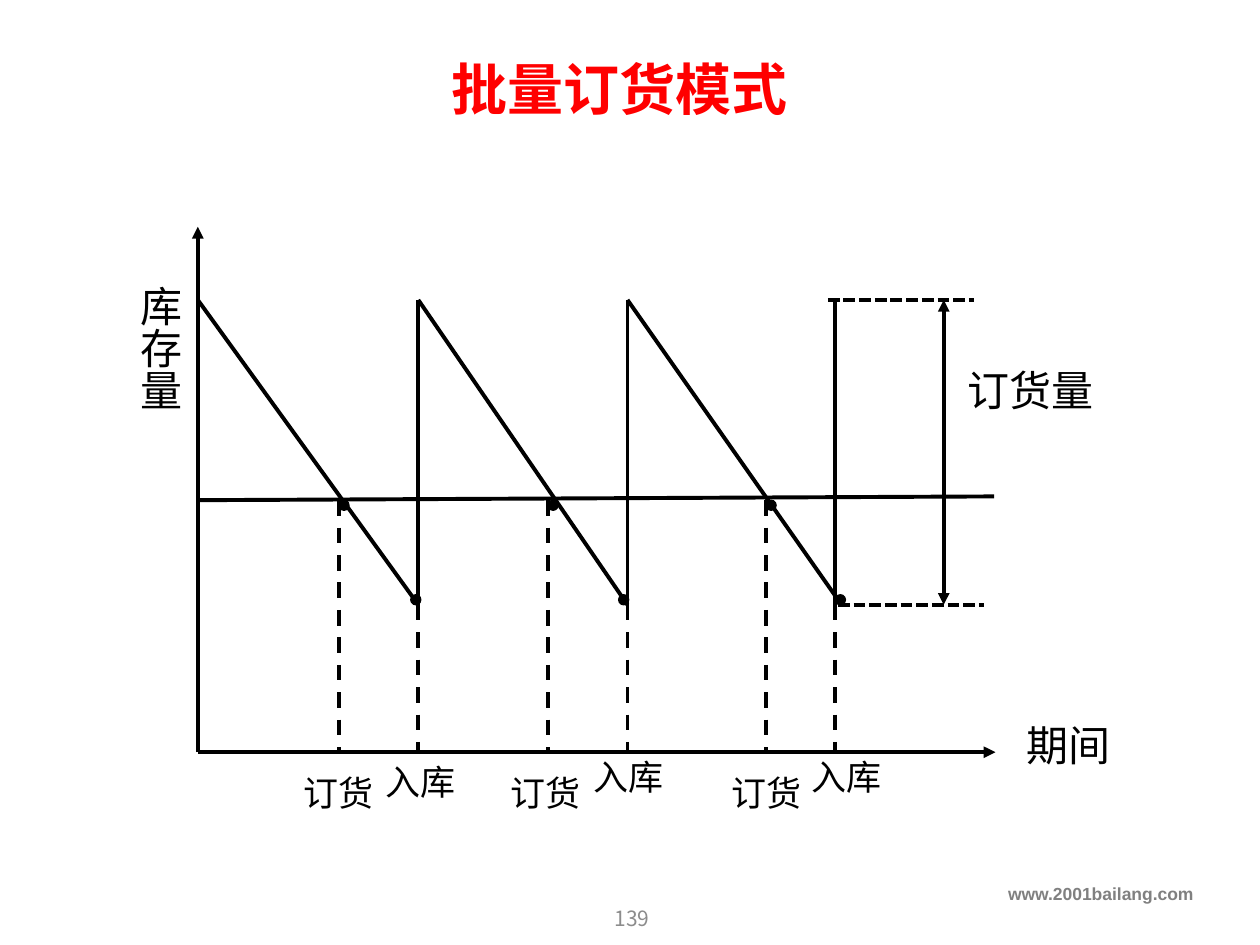
from lxml import etree
from pptx import Presentation
from pptx import util as u
from pptx.dml.color import RGBColor
from pptx.enum import dml, shapes, text
from pptx.oxml.ns import qn

BLACK = RGBColor(0, 0, 0)
RED = RGBColor(255, 0, 0)
GRAY = RGBColor(0x80, 0x80, 0x80)
LIGHT_GRAY = RGBColor(0x8C, 0x8C, 0x8C)
CJK = "Noto Sans CJK SC"
LEFT, CENTER, RIGHT = text.PP_ALIGN.LEFT, text.PP_ALIGN.CENTER, text.PP_ALIGN.RIGHT
DASH, DOT = dml.MSO_LINE.DASH, dml.MSO_LINE.SQUARE_DOT

AXIS_X, AXIS_Y = 1.57, 5.97
PEAK, REORDER, LOW = 2.38, 3.97, 4.8
ORDERS = [2.69, 4.35, 6.08]
ARRIVALS = [3.32, 4.98, 6.63]
DOT_SIZE = 0.08
LOW_DOTS = [3.26, 4.91, 6.63]
QUANTITY_X = 7.49

TITLE = {"size": 32, "bold": True, "color": RED, "align": CENTER}
FOOTER = {"size": 10, "bold": True, "color": GRAY, "align": RIGHT, "name": "Arial"}
NUMBER = {"size": 12, "color": LIGHT_GRAY, "align": CENTER,
          "anchor": text.MSO_ANCHOR.MIDDLE}
AXIS = {"size": 24, "wrap": False, "grow": True}
EVENT = {"size": 20, "wrap": False, "grow": True}

TEXTS = [
    ("www.2001bailang.com", (0, 6.96, 9.57, 0.35), FOOTER),
    ("139", (3.89, 7.09, 2.25, 0.4), NUMBER),
    ("库存量", (0.91, 2.17, 0.61, 1.11), {**AXIS, "vertical": True}),
    ("期间", (8.05, 5.66, 0.88, 0.5), AXIS),
    ("订货量", (7.58, 2.84, 1.21, 0.5), AXIS),
    *[("订货", (x, 6.07, 0.77, 0.44), EVENT) for x in (2.31, 3.95, 5.71)],
    *[("入库", (x, y, 0.76, 0.44), EVENT)
      for x, y in ((2.96, 5.99), (4.61, 5.95), (6.34, 5.95))],
    ("批量订货模式", (0.54, 0.38, 8.75, 0.63), TITLE),
]

LINES = [
    ((AXIS_X, AXIS_Y), (7.9, AXIS_Y), {"ends": ["tailEnd"]}),
    ((AXIS_X, AXIS_Y), (AXIS_X, 1.8), {"ends": ["tailEnd"]}),
    ((AXIS_X, REORDER), (7.89, 3.94), {}),
    *[((start, PEAK), (end, LOW), {})
      for start, end in zip([AXIS_X] + ARRIVALS, ARRIVALS[:2])],
    ((ARRIVALS[1], PEAK), (ARRIVALS[2], 4.73), {}),
    *[((x, PEAK), (x, LOW), {}) for x in ARRIVALS],
    ((6.57, PEAK), (7.73, PEAK), {"dash": DOT}),
    ((6.65, LOW), (7.81, LOW), {"dash": DOT}),
    ((QUANTITY_X, PEAK), (QUANTITY_X, LOW), {"ends": ["headEnd", "tailEnd"]}),
    *[((x, REORDER), (x, AXIS_Y), {"dash": DASH}) for x in ORDERS],
    *[((x, LOW), (x, AXIS_Y), {"dash": DASH}) for x in ARRIVALS],
]


def inches(values):
    return [u.Inches(value) for value in values]


def add_text(slide, words, place, style):
    box = slide.shapes.add_textbox(*inches(place))
    frame = box.text_frame
    settings = {
        "word_wrap": style.get("wrap", True),
        "vertical_anchor": style.get("anchor", text.MSO_ANCHOR.TOP),
        "auto_size": (text.MSO_AUTO_SIZE.SHAPE_TO_FIT_TEXT if style.get("grow")
                      else text.MSO_AUTO_SIZE.NONE),
    }
    for key, value in settings.items():
        setattr(frame, key, value)
    if style.get("vertical"):
        frame._txBody.bodyPr.set("vert", "eaVert")
    para = frame.paragraphs[0]
    para.alignment = style.get("align", LEFT)
    span = para.add_run()
    span.text = words
    span.font.color.rgb = style.get("color", BLACK)
    name = style.get("name", CJK)
    font = {"name": name, "size": u.Pt(style["size"]), "bold": style.get("bold", False)}
    for key, value in font.items():
        setattr(span.font, key, value)
    latin = span._r.rPr.find(qn("a:latin"))
    east = etree.Element(qn("a:ea"), typeface=name)
    latin.addnext(east)


def add_line(slide, start, end, style):
    line = slide.shapes.add_connector(shapes.MSO_CONNECTOR.STRAIGHT,
                                      *inches(start + end))
    line.line.color.rgb = BLACK
    line.line.width = u.Pt(2.25)
    if "dash" in style:
        line.line.dash_style = style["dash"]
    outline = line.line._get_or_add_ln()
    for tag in style.get("ends", []):
        etree.SubElement(outline, qn(f"a:{tag}"), type="triangle")
    etree.SubElement(line._element.spPr, qn("a:effectLst"))


def add_dot(slide, left, top):
    dot = slide.shapes.add_shape(shapes.MSO_SHAPE.FLOWCHART_CONNECTOR,
                                 *inches((left, top, DOT_SIZE, DOT_SIZE)))
    dot.shadow.inherit = False
    dot.fill.solid()
    dot.fill.fore_color.rgb = BLACK
    dot.line.color.rgb = BLACK
    dot.line.width = u.Pt(0.75)


def main():
    deck = Presentation()
    deck.slide_width, deck.slide_height = inches((10, 7.5))
    page = deck.slides.add_slide(deck.slide_layouts[6])
    for line in LINES:
        add_line(page, *line)
    for lefts, top in ((ORDERS, REORDER), (LOW_DOTS, LOW - DOT_SIZE)):
        for left in lefts:
            add_dot(page, left, top)
    for item in TEXTS:
        add_text(page, *item)
    deck.save("out.pptx")


if __name__ == "__main__":
    main()
